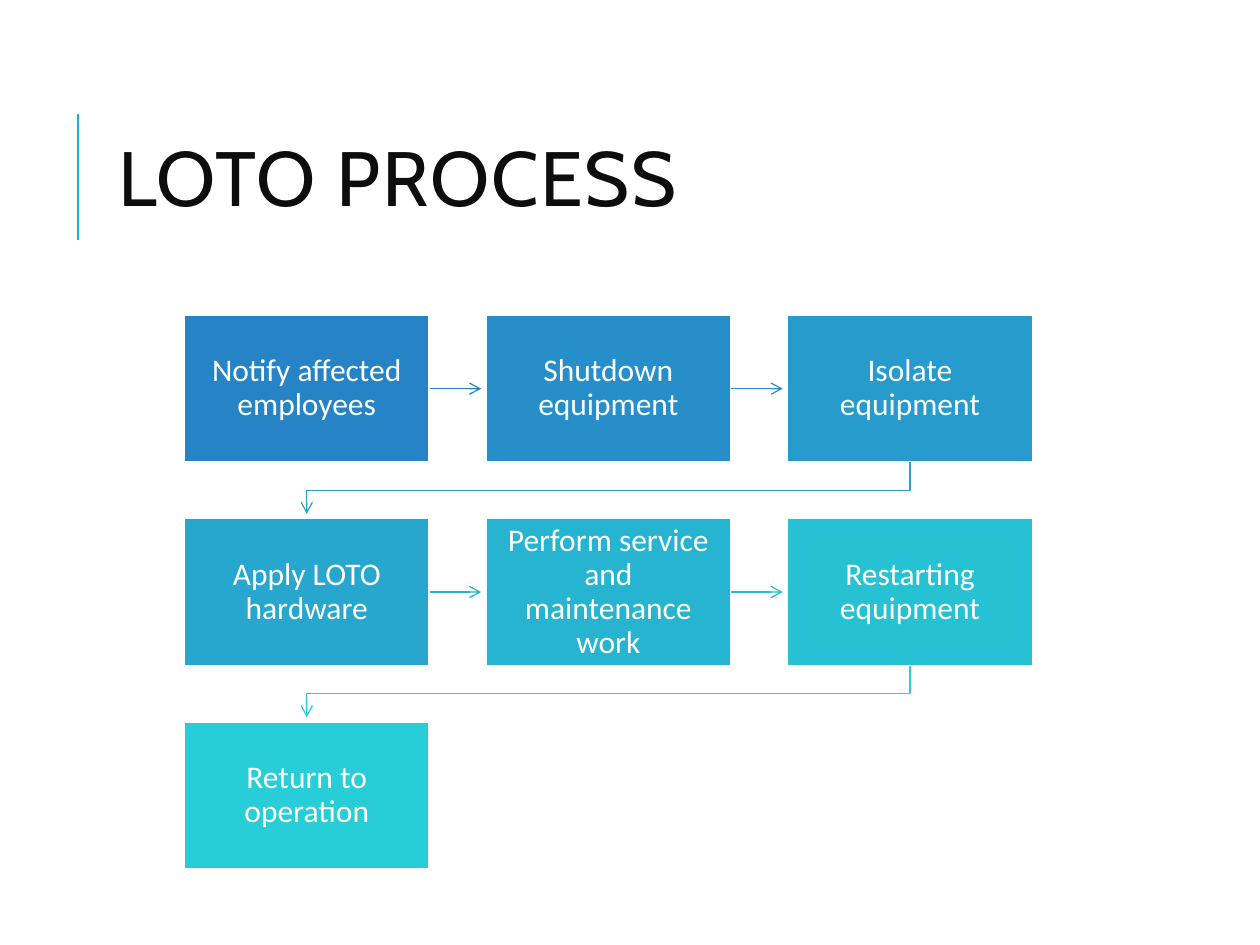
from pptx import Presentation
from pptx.dml.color import RGBColor as Rgb
from pptx.enum.shapes import MSO_CONNECTOR as Link, MSO_SHAPE as Kind
from pptx.enum.text import MSO_ANCHOR as Anchor, PP_ALIGN as Align
from pptx.oxml.ns import qn
from pptx.util import Cm, Pt
from lxml.etree import SubElement as Sub

TITLE = "LOTO PROCESS"
# step text, box colour, colour of the arrow to the next step
STEPS = [
    ("Notify affected employees", "2683C6", "2683C6"),
    ("Shutdown equipment", "268FC9", "2691C9"),
    ("Isolate equipment", "269BCC", "26A0CD"),
    ("Apply LOTO hardware", "27A7CE", "27AFD0"),
    ("Perform service and maintenance work", "27B4D1", "27BED4"),
    ("Restarting equipment", "27C1D4", "27CED7"),
    ("Return to operation", "27CED7", None),
]
THEME = {
    "rule": "1CADE4", "ink": "0D0D0D", "white": "FFFFFF",
    "head": "Cabin", "body": "Calibri",
    "big": Pt(44), "mid": Pt(18),
    "bar": Pt(1.5), "edge": Pt(1.25), "thin": Pt(0.75),
}
COLS = 3
LEFT, TOP = Cm(3.71), Cm(6.35)
WIDE, HIGH = Cm(4.95), Cm(2.97)
GAP, CLEAR = Cm(1.13), Cm(0.09)
PAD = Cm(0.25)


def stroke(shape, color, width):
    shape.line.color.rgb = Rgb.from_string(color)
    shape.line.width = width


def write(shape, text, font, size, color, lead):
    frame = shape.text_frame
    frame.text = text
    frame.word_wrap = True
    frame.vertical_anchor = Anchor.MIDDLE
    frame.margin_left = frame.margin_right = PAD
    frame.margin_top = frame.margin_bottom = PAD
    para = frame.paragraphs[0]
    para.line_spacing = lead
    run = para.runs[0]
    run.font.name, run.font.size = font, size
    run.font.color.rgb = Rgb.from_string(color)
    return para, run


def straight(shapes, start, end, color, width):
    line = shapes.add_connector(Link.STRAIGHT, *start, *end)
    stroke(line, color, width)
    Sub(line._element.spPr, qn("a:effectLst"))
    return line


def add_title(shapes):
    straight(shapes, (Cm(1.57), Cm(4.83)), (Cm(1.57), Cm(2.29)),
             THEME["rule"], THEME["bar"])
    box = shapes.add_textbox(Cm(2.13), Cm(1.63), Cm(20.24), Cm(4.17))
    _, run = write(box, TITLE, THEME["head"], THEME["big"], THEME["ink"], 0.8)
    run._r.get_or_add_rPr().set("spc", "100")


def add_step(shapes, index, text, color):
    row, col = divmod(index, COLS)
    box = shapes.add_shape(Kind.RECTANGLE, LEFT + col * (WIDE + GAP),
                           TOP + row * (HIGH + GAP), WIDE, HIGH)
    box.shadow.inherit = False
    box.fill.solid()
    box.fill.fore_color.rgb = Rgb.from_string(color)
    stroke(box, THEME["white"], THEME["edge"])
    para, _ = write(box, text, THEME["body"], THEME["mid"], THEME["white"], 0.9)
    para.alignment = Align.CENTER
    return box


def add_arrow(shapes, box, goal, color):
    """Go straight to a step in the same row, or bend down to the next row."""
    if box.top == goal.top:
        mid = box.top + HIGH // 2
        arrow = straight(shapes, (box.left + WIDE, mid),
                         (goal.left - CLEAR, mid), color, THEME["thin"])
        arrow.begin_connect(box, 3)
    else:
        x, y = box.left + WIDE // 2, box.top + HIGH
        end, turn = goal.left + WIDE // 2, y + GAP // 2
        pen = shapes.build_freeform(x, y)
        pen.add_line_segments(
            [(x, turn), (end, turn), (end, goal.top - CLEAR)], close=False)
        arrow = pen.convert_to_shape()
        arrow.shadow.inherit = False
        arrow.fill.background()
        stroke(arrow, color, THEME["thin"])
    Sub(arrow.line._get_or_add_ln(), qn("a:tailEnd"), type="arrow")


def main():
    deck = Presentation()
    deck.slide_width, deck.slide_height = Cm(25.4), Cm(19.05)
    shapes = deck.slides.add_slide(deck.slide_layouts[6]).shapes
    add_title(shapes)
    boxes = [add_step(shapes, i, text, color)
             for i, (text, color, _) in enumerate(STEPS)]
    for box, goal, (_, _, color) in zip(boxes, boxes[1:], STEPS):
        add_arrow(shapes, box, goal, color)
    deck.save("out.pptx")


if __name__ == "__main__":
    main()
